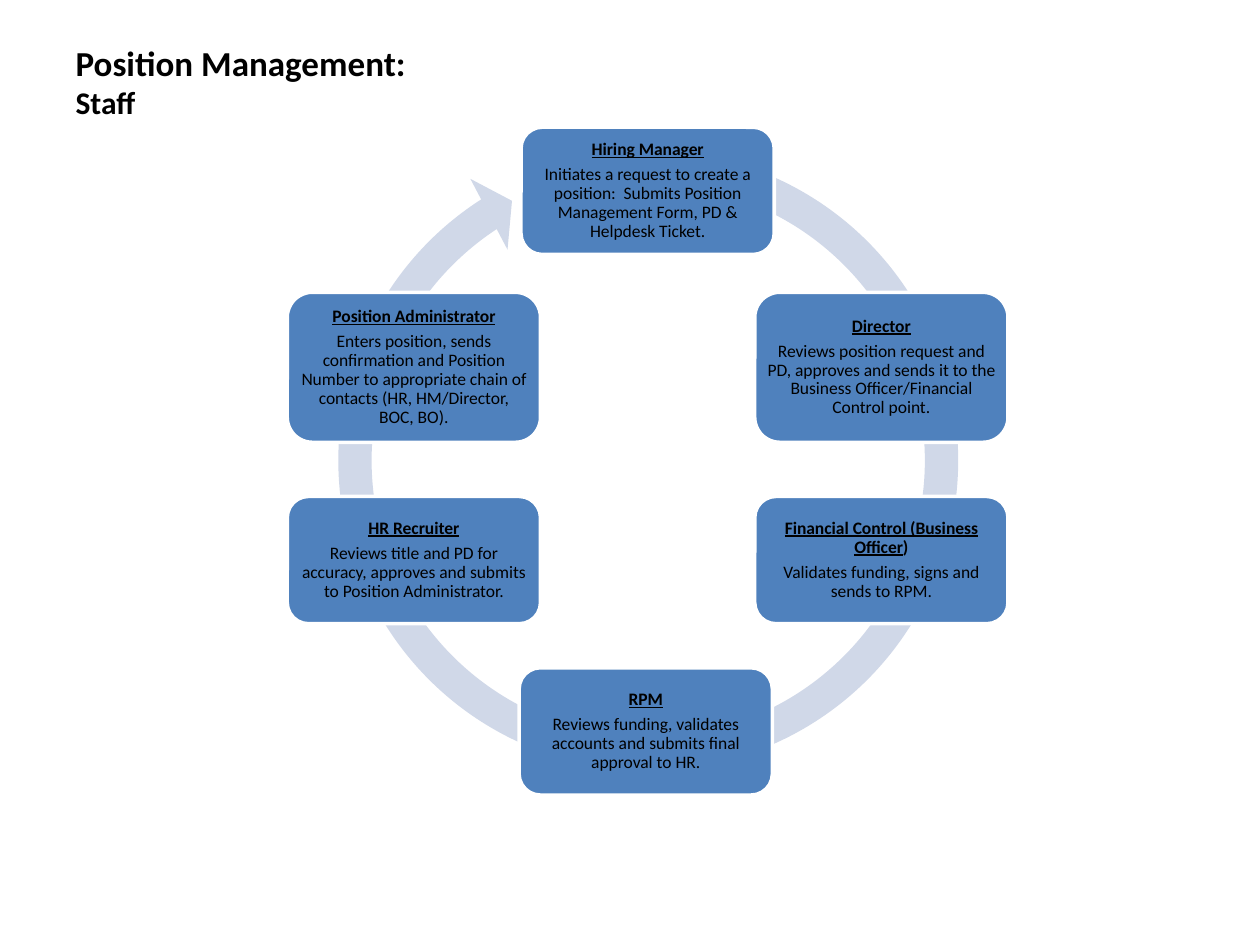
from pptx import Presentation
from pptx.dml.color import RGBColor
from pptx.enum.shapes import MSO_SHAPE
from pptx.enum.text import MSO_ANCHOR, MSO_AUTO_SIZE, PP_ALIGN
from pptx.util import Inches, Pt

ROUNDED, CIRCULAR_ARROW = MSO_SHAPE.ROUNDED_RECTANGLE, MSO_SHAPE.CIRCULAR_ARROW
MIDDLE, BOTTOM = MSO_ANCHOR.MIDDLE, MSO_ANCHOR.BOTTOM
LEFT, CENTER = PP_ALIGN.LEFT, PP_ALIGN.CENTER
NO_AUTOFIT = MSO_AUTO_SIZE.NONE

# Grid of 100 columns by 75 rows
COLS, ROWS = 100, 75


def rgb(value):
    return RGBColor.from_string(value)


class CycleSlide:
    FONT, TEXT = "Calibri", "000000"
    BOX, EDGE, RING = "4F81BD", "FFFFFF", "D0D8E8"

    def __init__(self, prs):
        self.s = prs.slides.add_slide(prs.slide_layouts[5])
        self.col = prs.slide_width / COLS
        self.row = prs.slide_height / ROWS

    def place(self, x, y, w, h):
        return (round(x * self.col), round(y * self.row),
                round(w * self.col), round(h * self.row))

    def run(self, p, text, size, bold=False, underline=False):
        r = p.add_run()
        r.text = text
        r.font.name, r.font.size = self.FONT, Pt(size)
        r.font.bold, r.font.underline = bold, underline
        r.font.color.rgb = rgb(self.TEXT)

    def title(self, main, sub, *box):
        sp = self.s.shapes.title
        sp.left, sp.top, sp.width, sp.height = self.place(*box)
        tf = sp.text_frame
        tf.word_wrap, tf.auto_size = True, NO_AUTOFIT
        tf.vertical_anchor = BOTTOM
        p = tf.paragraphs[0]
        p.alignment = LEFT
        self.run(p, main, 20, bold=True)
        p.add_line_break()
        self.run(p, sub, 18, bold=True)

    def shape(self, kind, fill, *box):
        sp = self.s.shapes.add_shape(kind, *self.place(*box))
        sp.shadow.inherit = False
        sp.fill.solid()
        sp.fill.fore_color.rgb = rgb(fill)
        return sp

    def ring(self, adjustments, *box):
        sp = self.shape(CIRCULAR_ARROW, self.RING, *box)
        sp.line.fill.background()
        for i, value in enumerate(adjustments):
            sp.adjustments[i] = value

    def step(self, cx, cy, h, heading, body, w=20.1):
        """One rounded box, centred on (cx, cy)."""
        sp = self.shape(ROUNDED, self.BOX, cx - w / 2, cy - h / 2, w, h)
        sp.line.color.rgb, sp.line.width = rgb(self.EDGE), Pt(2)
        tf = sp.text_frame
        tf.word_wrap, tf.vertical_anchor = True, MIDDLE
        tf.margin_left = tf.margin_right = Inches(0.04)
        tf.margin_top = tf.margin_bottom = Inches(0.04)
        paragraphs = tf.paragraphs[0], tf.add_paragraph()
        for p in paragraphs:
            p.alignment, p.line_spacing = CENTER, 0.9
            p.space_after = Pt(3.5)
        # A closing bracket in the heading stays without underline
        name = heading.rstrip(")")
        self.run(paragraphs[0], name, 10, bold=True, underline=True)
        if name != heading:
            self.run(paragraphs[0], ")", 10, bold=True)
        self.run(paragraphs[1], body, 10)


def main():
    prs = Presentation()
    prs.slide_width, prs.slide_height = Inches(10), Inches(7.5)
    slide = CycleSlide(prs)

    # Title
    slide.title("Position Management:", "Staff", 5, 3, 38.7, 7.1)

    # Ring behind the steps
    slide.ring((0.05, 3.13, 142.26, 171.28, 0.06), 25, 10.1, 52.9, 52.9)

    # Steps, clockwise from the top
    mid, reach = 51.4, 18.55
    left, right = mid - reach, mid + reach
    upper, lower = 29.15, 44.45
    low, tall = 10.1, 11.9
    steps = [
        (mid, 15.15, low, "Hiring Manager",
         "Initiates a request to create a position:  Submits Position "
         "Management Form, PD & Helpdesk Ticket."),
        (right, upper, tall, "Director",
         "Reviews position request and PD, approves and sends it to the "
         "Business Officer/Financial Control point."),
        (right, lower, low, "Financial Control (Business Officer)",
         "Validates funding, signs and sends to RPM."),
        (mid - 0.15, 58.05, low, "RPM",
         "Reviews funding, validates accounts and submits final approval "
         "to HR."),
        (left, lower, low, "HR Recruiter",
         "Reviews title and PD for accuracy, approves and submits to "
         "Position Administrator."),
        (left, upper, tall, "Position Administrator",
         "Enters position, sends confirmation and Position Number to "
         "appropriate chain of contacts (HR, HM/Director, BOC, BO)."),
    ]
    for step in steps:
        slide.step(*step)

    prs.save("out.pptx")


if __name__ == "__main__":
    main()
